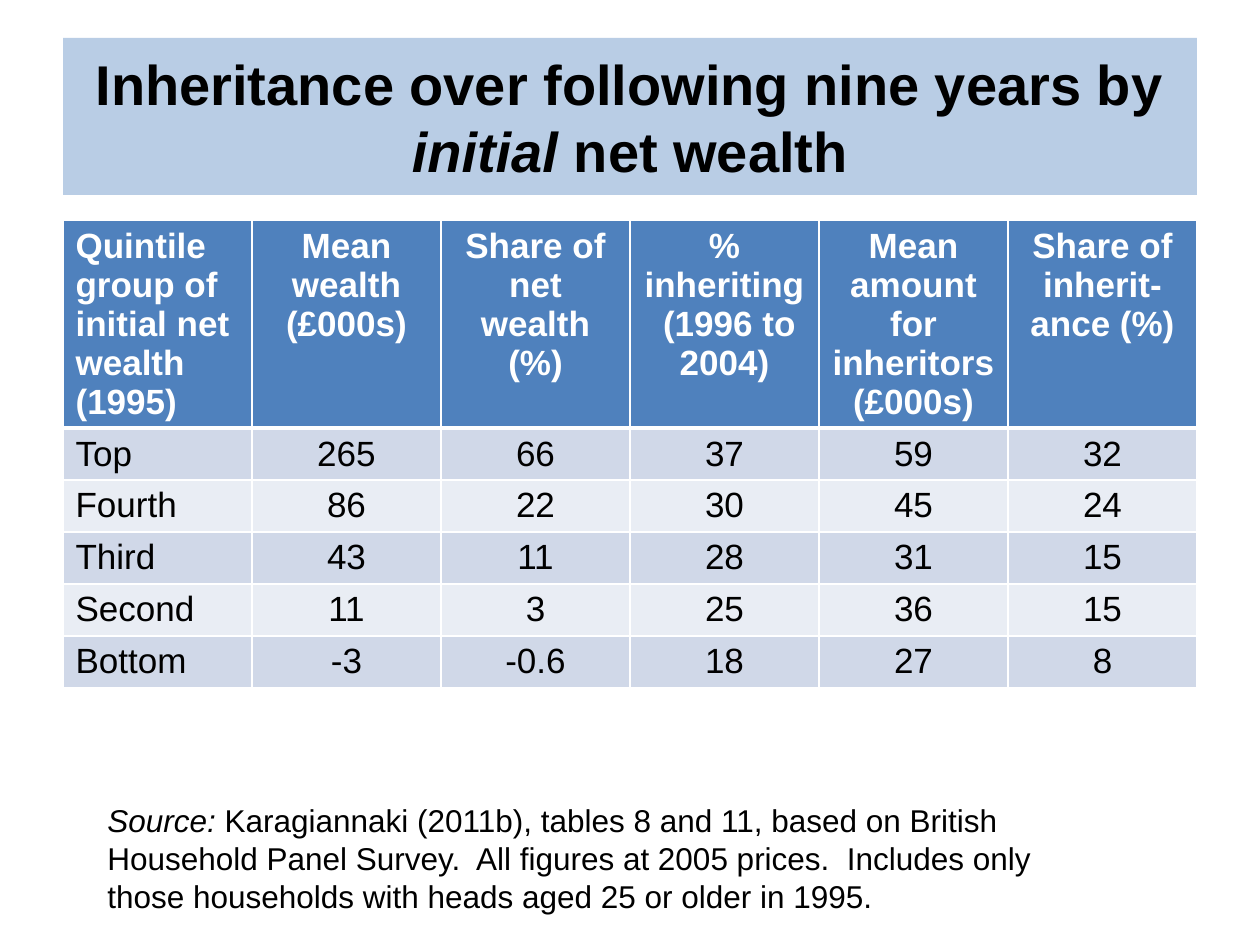
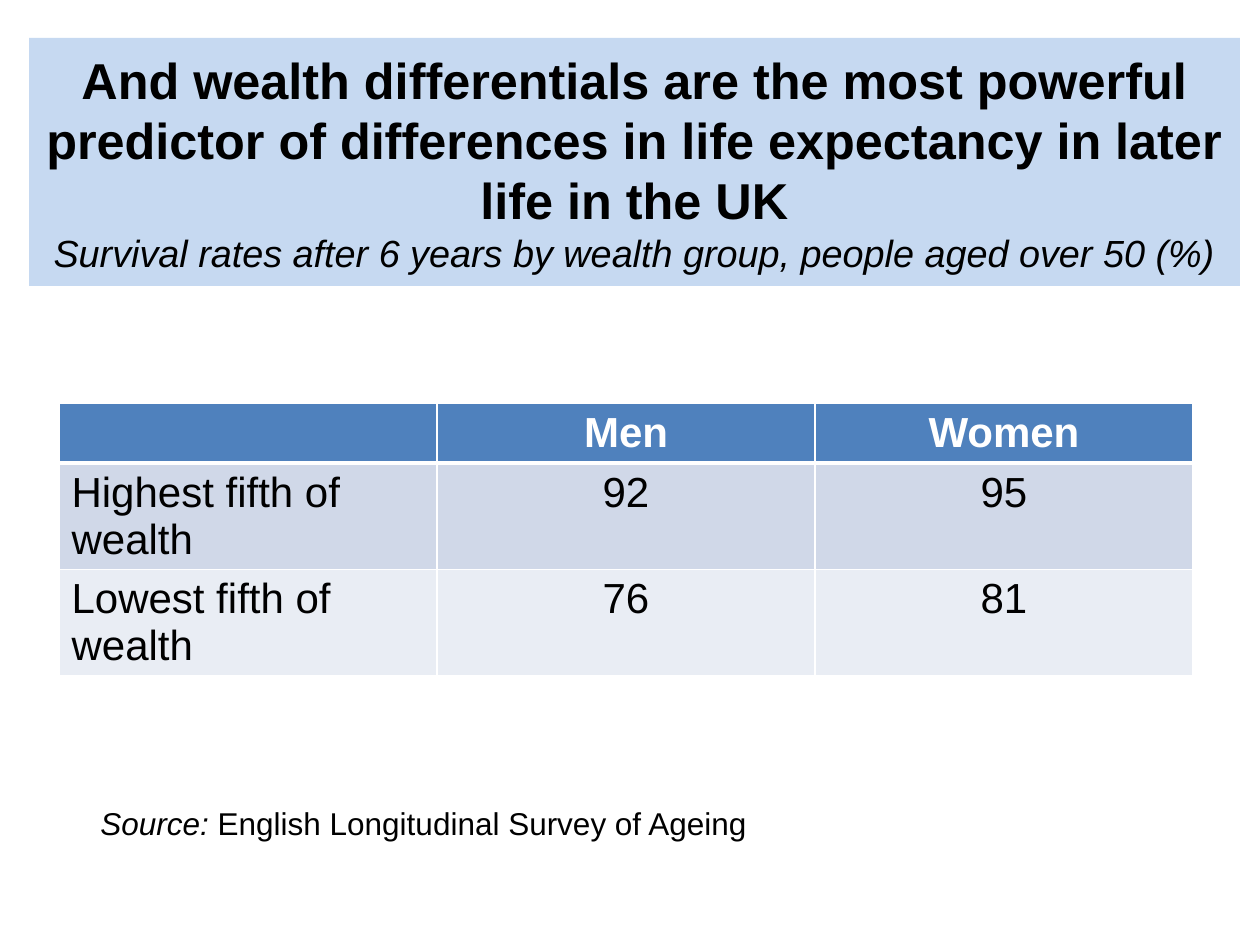
from lxml.etree import SubElement
from pptx import Presentation
from pptx.dml.color import RGBColor
from pptx.enum.text import MSO_ANCHOR, MSO_AUTO_SIZE, PP_ALIGN
from pptx.oxml.ns import qn
from pptx.util import Emu, Pt

PX_PER_INCH = 126
FONT = "Arial"
TITLE_ONLY = 5
COLOURS = {
    "text": "000000",
    "header_text": "FFFFFF",
    "header": "4F81BD",
    "band_dark": "D0D8E8",
    "band_light": "E9EDF4",
    "border": "FFFFFF",
    "title_blue": "B9CDE5",
    "title_pale": "C6D9F1",
}


def px(length):
    """Turn pixels into EMU."""
    return Emu(round(length * 914400 / PX_PER_INCH))


def colour(name):
    """Look up a named colour."""
    return RGBColor.from_string(COLOURS[name])


def style_paragraph(paragraph, size, colour_name="text", alignment=PP_ALIGN.LEFT, bold=None):
    """Set the alignment and font shared by a whole paragraph."""
    paragraph.alignment = alignment
    font = paragraph.font
    font.name, font.size, font.bold = FONT, Pt(size), bold
    font.color.rgb = colour(colour_name)


def add_runs(paragraph, runs):
    """Add (text, bold, italic, size) runs; a newline text is a line break."""
    for text, bold, italic, size in runs:
        if text == "\n":
            paragraph.add_line_break()
            continue
        run = paragraph.add_run()
        run.text = text
        run.font.bold, run.font.italic = bold, italic
        run.font.size = Pt(size)


def place(shape, box):
    """Move a shape to a pixel box."""
    shape.left, shape.top, shape.width, shape.height = map(px, box)


def fill_title(slide, box, fill_name, size, runs):
    """Turn the title placeholder into a coloured band."""
    title = slide.shapes.title
    place(title, box)
    title.fill.solid()
    title.fill.fore_color.rgb = colour(fill_name)
    frame = title.text_frame
    frame.word_wrap = True
    frame.auto_size = MSO_AUTO_SIZE.NONE
    frame.vertical_anchor = MSO_ANCHOR.MIDDLE
    paragraph = frame.paragraphs[0]
    style_paragraph(paragraph, size, alignment=PP_ALIGN.CENTER)
    add_runs(paragraph, runs)


def set_borders(cell, top, bottom):
    """Draw the four cell borders, one point wide at the sides."""
    properties = cell._tc.get_or_add_tcPr()
    for side, width in (("L", 1), ("R", 1), ("T", top), ("B", bottom)):
        line = SubElement(properties, qn(f"a:ln{side}"), w=str(Pt(width)))
        fill = SubElement(line, qn("a:solidFill"))
        SubElement(fill, qn("a:srgbClr"), val=COLOURS["border"])


def add_data_table(slide, box, row_heights, size, rows):
    """Add a table with a header row and banded body rows."""
    left, top, width, height = map(px, box)
    table = slide.shapes.add_table(len(rows), len(rows[0]), left, top, width, height).table
    for row_index, (values, row_height) in enumerate(zip(rows, row_heights)):
        table.rows[row_index].height = px(row_height)
        is_header = row_index == 0
        band = "band_dark" if row_index % 2 else "band_light"
        for column_index, value in enumerate(values):
            cell = table.cell(row_index, column_index)
            set_borders(cell, 3 if row_index == 1 else 1, 3 if is_header else 1)
            cell.fill.solid()
            cell.fill.fore_color.rgb = colour("header" if is_header else band)
            cell.text = value
            style_paragraph(
                cell.text_frame.paragraphs[0],
                size,
                "header_text" if is_header else "text",
                PP_ALIGN.CENTER if column_index else PP_ALIGN.LEFT,
                is_header,
            )


def add_source(slide, box, text):
    """Add the source note under the table."""
    frame = slide.shapes.add_textbox(*map(px, box)).text_frame
    frame.word_wrap = True
    frame.auto_size = MSO_AUTO_SIZE.SHAPE_TO_FIT_TEXT
    paragraph = frame.paragraphs[0]
    style_paragraph(paragraph, 18)
    add_runs(paragraph, [("Source: ", False, True, 18), (text, False, False, 18)])


def add_slide(presentation):
    """Add a slide with only a title placeholder."""
    return presentation.slides.add_slide(presentation.slide_layouts[TITLE_ONLY])


def build_inheritance(presentation):
    """Build the slide on inheritance by initial wealth."""
    slide = add_slide(presentation)
    fill_title(slide, (63, 38, 1134, 157), "title_blue", 32, [
        ("Inheritance over following nine years by ", True, False, 32),
        ("initial ", True, True, 32),
        ("net wealth", True, False, 32),
    ])
    add_data_table(slide, (63, 220, 1134, 467), [208] + [52] * 5, 20, [
        ("Quintile group of initial net wealth (1995)", "Mean wealth (£000s)",
         "Share of net wealth (%)", "% inheriting  (1996 to 2004)",
         "Mean amount for inheritors (£000s)", "Share of inherit-ance (%)"),
        ("Top", "265", "66", "37", "59", "32"),
        ("Fourth", "86", "22", "30", "45", "24"),
        ("Third", "43", "11", "28", "31", "15"),
        ("Second", "11", "3", "25", "36", "15"),
        ("Bottom", "-3", "-0.6", "18", "27", "8"),
    ])
    add_source(slide, (95, 795, 983, 127),
               "Karagiannaki (2011b), tables 8 and 11, based on British Household Panel Survey.  "
               "All figures at 2005 prices.  Includes only those households with heads aged 25 "
               "or older in 1995.")


def build_survival(presentation):
    """Build the slide on survival rates by wealth group."""
    slide = add_slide(presentation)
    fill_title(slide, (29, 38, 1211, 248), "title_pale", 28.8, [
        ("And wealth differentials are the most powerful predictor of differences "
         "in life expectancy in later life in the UK", True, False, 28.8),
        ("\n", False, False, 28.8),
        ("Survival rates after 6 years by wealth group, people aged over 50 (%)",
         False, True, 21.6),
    ])
    add_data_table(slide, (59, 403, 1134, 272), [60, 106, 106], 24, [
        ("", "Men", "Women"),
        ("Highest fifth of wealth", "92", "95"),
        ("Lowest fifth of wealth", "76", "81"),
    ])
    add_source(slide, (88, 798, 808, 50), "English Longitudinal Survey of Ageing")


def main():
    """Build and save the presentation."""
    presentation = Presentation()
    presentation.slide_width, presentation.slide_height = px(1260), px(945)
    build_inheritance(presentation)
    build_survival(presentation)
    presentation.save("out.pptx")


if __name__ == "__main__":
    main()
